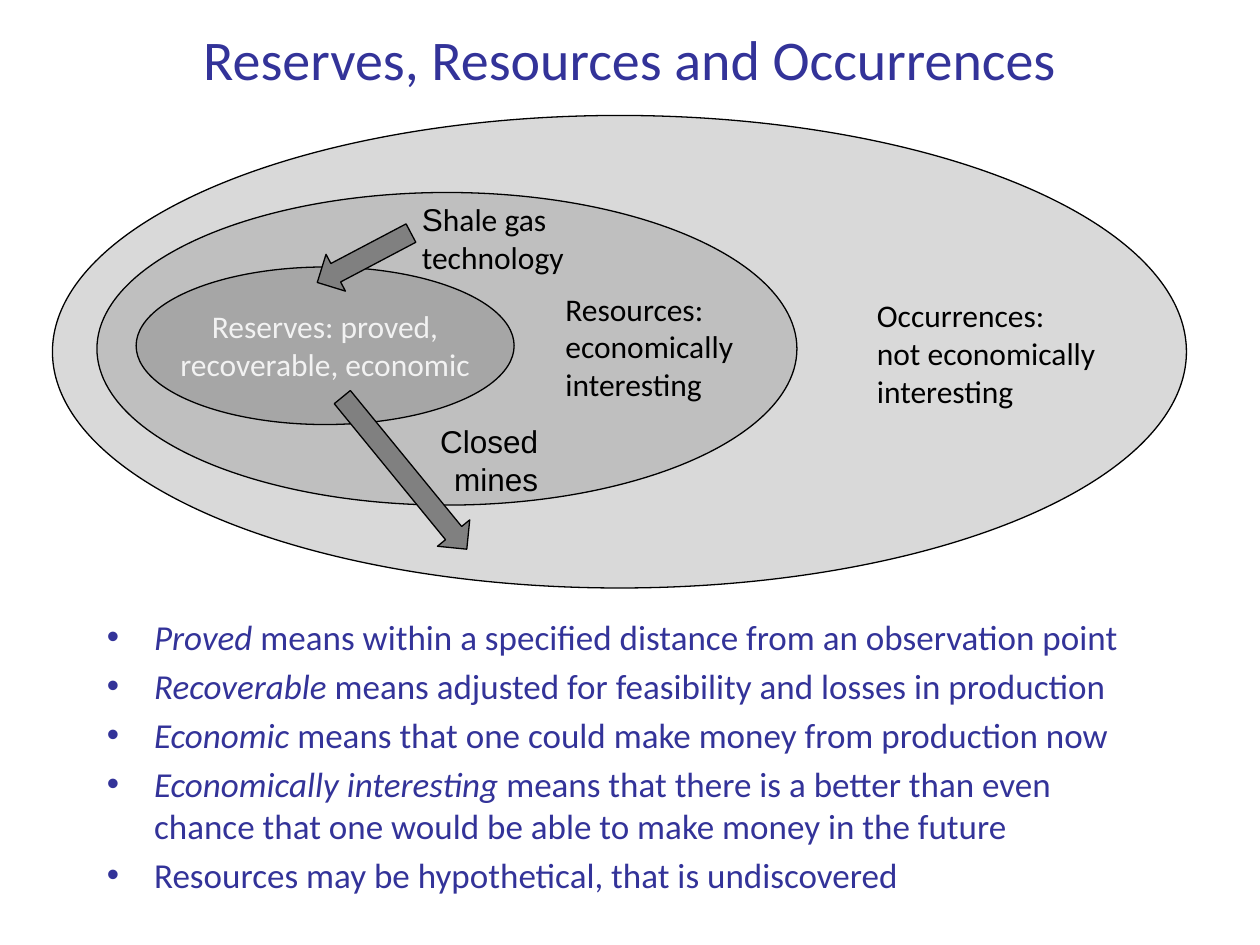
from lxml.etree import SubElement
from pptx import Presentation
from pptx.dml.color import RGBColor
from pptx.enum.shapes import MSO_SHAPE
from pptx.enum.text import MSO_ANCHOR, PP_ALIGN
from pptx.oxml.ns import qn
from pptx.util import Pt

HUES = {"ink": "333399", "black": "000000", "pale": "F2F2F2", "outer": "D9D9D9",
        "middle": "BFBFBF", "inner": "A6A6A6", "arrow": "808080"}

OVALS = [
    ((0, 0, 648, 270), "outer"),
    ((25.4, 44, 400, 178.6), "middle"),
    ((47.8, 86.6, 216, 90), "inner"),
]
ARROWS = [
    ((145, 192.5, 112.3, 23.8), 50.7),
    ((147.8, 69.4, 60.5, 23.8), 152.2),
]
LABELS = [
    ((286, 96, 133.2, 64), "black", PP_ALIGN.LEFT,
     [[("Resources: economically interesting", "Calibri")]]),
    ((464, 99.6, 152.6, 64), "black", PP_ALIGN.LEFT,
     [[("Occurrences:", "Calibri")], [("not economically interesting", "Calibri")]]),
    ((47.8, 106, 216, 44.6), "pale", PP_ALIGN.CENTER,
     [[("Reserves: proved, recoverable, economic", "Calibri")]]),
    ((204, 44.9, 113.8, 51), "black", PP_ALIGN.LEFT,
     [[("S", "Arial"), ("hale gas technology", "Calibri")]]),
    ((200.4, 171.6, 84.2, 51), "black", PP_ALIGN.RIGHT,
     [[("Closed mines", "Arial")]]),
]
POINTS = [
    ("Proved", " means within a specified distance from an observation point"),
    ("Recoverable ", "means adjusted for feasibility and losses in production"),
    ("Economic ", "means that one could make money from production now"),
    ("Economically interesting ", "means that there is a better than even chance "
     "that one would be able to make money in the future"),
    ("", "Resources may be hypothetical, that is undiscovered"),
]


def tint(name):
    """Return the named colour."""
    return RGBColor.from_string(HUES[name])


def span(box, part):
    """Return the place of a part inside a box as lengths."""
    x, y, w, h = part
    return Pt(box[0] + x), Pt(box[1] + y), Pt(w), Pt(h)


def add_run(para, text, hue, **style):
    """Add a run with the given font values."""
    run = para.add_run()
    run.text = text
    run.font.color.rgb = tint(hue)
    for key, value in style.items():
        setattr(run.font, key, value)


def add_form(shapes, kind, place, hue, turn=0):
    """Add a filled shape with a thin black outline."""
    form = shapes.add_shape(kind, *place)
    form.shadow.inherit = False
    form.fill.solid()
    form.fill.fore_color.rgb = tint(hue)
    form.line.color.rgb = tint("black")
    form.line.width = Pt(0.75)
    form.rotation = turn


def add_label(shapes, place, hue, align, lines):
    """Add a wrapped label, one paragraph for each line."""
    frame = shapes.add_textbox(*place).text_frame
    frame.word_wrap = True
    for i, runs in enumerate(lines):
        para = frame.add_paragraph() if i else frame.paragraphs[0]
        para.alignment = align
        for text, font in runs:
            add_run(para, text, hue, size=Pt(18), name=font)


def add_title(slide, box):
    """Place and format the title."""
    title = slide.shapes.title
    places = zip(("left", "top", "width", "height"), span((0, 0), box))
    for key, value in places:
        setattr(title, key, value)
    frame = title.text_frame
    frame.vertical_anchor = MSO_ANCHOR.MIDDLE
    para = frame.paragraphs[0]
    para.alignment = PP_ALIGN.CENTER
    add_run(para, "Reserves, Resources and Occurrences", "ink", size=Pt(32), name="Calibri")


def add_sets(slide, box):
    """Draw the nested ovals with their arrows and labels."""
    shapes = slide.shapes
    for part, hue in OVALS:
        add_form(shapes, MSO_SHAPE.OVAL, span(box, part), hue)
    for part, turn in ARROWS:
        add_form(shapes, MSO_SHAPE.RIGHT_ARROW, span(box, part), "arrow", turn)
    for part, hue, align, lines in LABELS:
        add_label(shapes, span(box, part), hue, align, lines)


def add_points(slide, box):
    """Write the bulleted definitions."""
    frame = slide.shapes.add_textbox(*span((0, 0), box)).text_frame
    frame.word_wrap = True
    for i, (term, rest) in enumerate(POINTS):
        para = frame.add_paragraph() if i else frame.paragraphs[0]
        para.space_before = Pt(4)
        props = para._p.get_or_add_pPr()
        props.set("marL", str(Pt(27)))
        props.set("indent", str(Pt(-27)))
        SubElement(props, qn("a:buFont")).set("typeface", "Arial")
        SubElement(props, qn("a:buChar")).set("char", "•")
        for text, slant in ((term, True), (rest, False)):
            if text:
                add_run(para, text, "ink", size=Pt(20), name="Calibri", italic=slant)


def main():
    """Build and save the slide."""
    deck = Presentation()
    deck.slide_width, deck.slide_height = Pt(720), Pt(540)
    slide = deck.slides.add_slide(deck.slide_layouts[5])
    add_title(slide, (36, 6, 648, 54))
    add_sets(slide, (30, 66, 648, 270))
    add_points(slide, (54, 348, 606, 174))
    deck.save("out.pptx")


if __name__ == "__main__":
    main()
